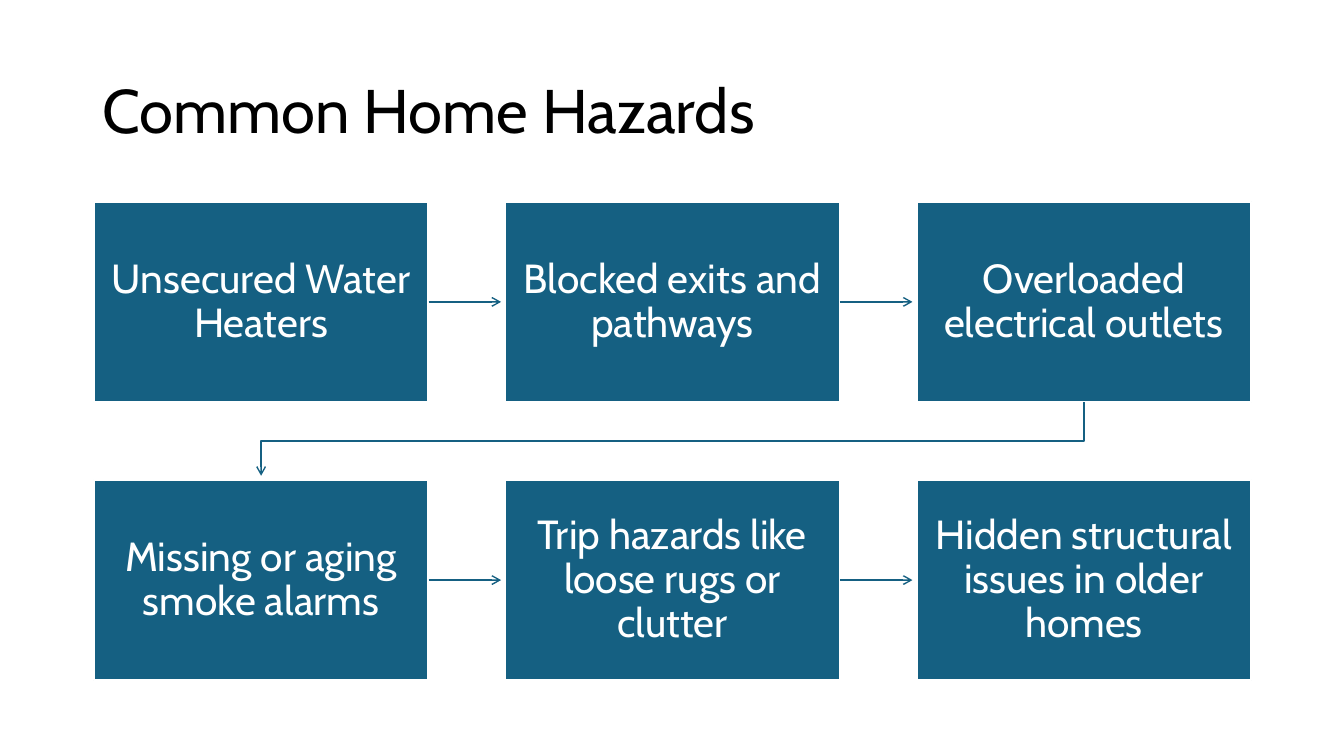
import pptx
import pptx.dml.color
import pptx.enum.shapes
import pptx.enum.text
import pptx.oxml
import pptx.oxml.ns
import pptx.util

Inches = pptx.util.Inches
Pt = pptx.util.Pt

HAZARDS = [
    "Unsecured Water Heaters",
    "Blocked exits and pathways",
    "Overloaded electrical outlets",
    "Missing or aging smoke alarms",
    "Trip hazards like loose rugs or clutter",
    "Hidden structural issues in older homes",
]
COLUMNS = 3
LEFT, TOP = 0.93, 2.0
BOX_WIDTH, BOX_HEIGHT = 3.32, 1.99
COLUMN_STEP, ROW_STEP = 4.08, 2.76
ARROW_GAP = 0.04


def color(hex_string):
    return pptx.dml.color.RGBColor.from_string(hex_string)


def set_attributes(target, values):
    for name, value in values.items():
        setattr(target, name, value)


class HazardSlide:
    """Holds the slide and its style."""

    font_name = "Cabin"
    accent = "156082"
    white = "FFFFFF"
    black = "000000"

    def __init__(self, slide):
        self.slide = slide

    def fill_text(self, shape, text, size, text_color, alignment, margins):
        frame = shape.text_frame
        set_attributes(frame, {
            "word_wrap": True,
            "vertical_anchor": pptx.enum.text.MSO_ANCHOR.MIDDLE,
            "margin_left": Inches(margins[0]),
            "margin_right": Inches(margins[0]),
            "margin_top": Inches(margins[1]),
            "margin_bottom": Inches(margins[1]),
        })
        paragraph = frame.paragraphs[0]
        paragraph.text = text
        set_attributes(paragraph, {"alignment": alignment, "line_spacing": 0.9})
        set_attributes(paragraph.font, {"name": self.font_name, "size": Pt(size)})
        paragraph.font.color.rgb = color(text_color)

    def title(self, text):
        shape = self.slide.shapes.add_textbox(
            Inches(0.92), Inches(0.4), Inches(11.5), Inches(1.45))
        self.fill_text(shape, text, 44, self.black,
                       pptx.enum.text.PP_ALIGN.LEFT, (0.1, 0.05))

    def box(self, left, top, text):
        shape = self.slide.shapes.add_shape(
            pptx.enum.shapes.MSO_SHAPE.RECTANGLE,
            Inches(left), Inches(top), Inches(BOX_WIDTH), Inches(BOX_HEIGHT))
        shape.shadow.inherit = False
        shape.fill.solid()
        shape.fill.fore_color.rgb = color(self.accent)
        shape.line.color.rgb = color(self.white)
        shape.line.width = Pt(1.5)
        self.fill_text(shape, text, 29, self.white,
                       pptx.enum.text.PP_ALIGN.CENTER, (0.16, 0.17))

    def style_arrow(self, shape):
        shape.line.color.rgb = color(self.accent)
        shape.line.width = Pt(1)
        outline = shape._element.spPr.find(pptx.oxml.ns.qn("a:ln"))
        outline.append(pptx.oxml.parse_xml(
            f'<a:tailEnd {pptx.oxml.ns.nsdecls("a")} type="arrow"/>'))

    def straight_arrow(self, start_x, end_x, y):
        connector = self.slide.shapes.add_connector(
            pptx.enum.shapes.MSO_CONNECTOR.STRAIGHT,
            Inches(start_x), Inches(y), Inches(end_x), Inches(y))
        self.style_arrow(connector)
        connector._element.spPr.append(pptx.oxml.parse_xml(
            f'<a:effectLst {pptx.oxml.ns.nsdecls("a")}/>'))

    def bent_arrow(self, points):
        corners = [(Inches(x), Inches(y)) for x, y in points]
        builder = self.slide.shapes.build_freeform(*corners[0])
        builder.add_line_segments(corners[1:], close=False)
        shape = builder.convert_to_shape()
        shape.shadow.inherit = False
        shape.fill.background()
        self.style_arrow(shape)


def main():
    presentation = pptx.Presentation()
    presentation.slide_width = Inches(13.33)
    presentation.slide_height = Inches(7.5)
    hazard_slide = HazardSlide(
        presentation.slides.add_slide(presentation.slide_layouts[6]))
    hazard_slide.title("Common Home Hazards")

    for index, hazard in enumerate(HAZARDS):
        row, column = divmod(index, COLUMNS)
        left = LEFT + column * COLUMN_STEP
        top = TOP + row * ROW_STEP
        hazard_slide.box(left, top, hazard)
        if column < COLUMNS - 1:
            hazard_slide.straight_arrow(
                left + BOX_WIDTH, left + COLUMN_STEP - ARROW_GAP,
                top + BOX_HEIGHT / 2)

    first_center = LEFT + BOX_WIDTH / 2
    last_center = first_center + (COLUMNS - 1) * COLUMN_STEP
    row_bottom = TOP + BOX_HEIGHT
    next_row = TOP + ROW_STEP
    middle = (row_bottom + next_row) / 2
    hazard_slide.bent_arrow([
        (last_center, row_bottom), (last_center, middle),
        (first_center, middle), (first_center, next_row - ARROW_GAP)])

    presentation.save("out.pptx")


if __name__ == "__main__":
    main()
